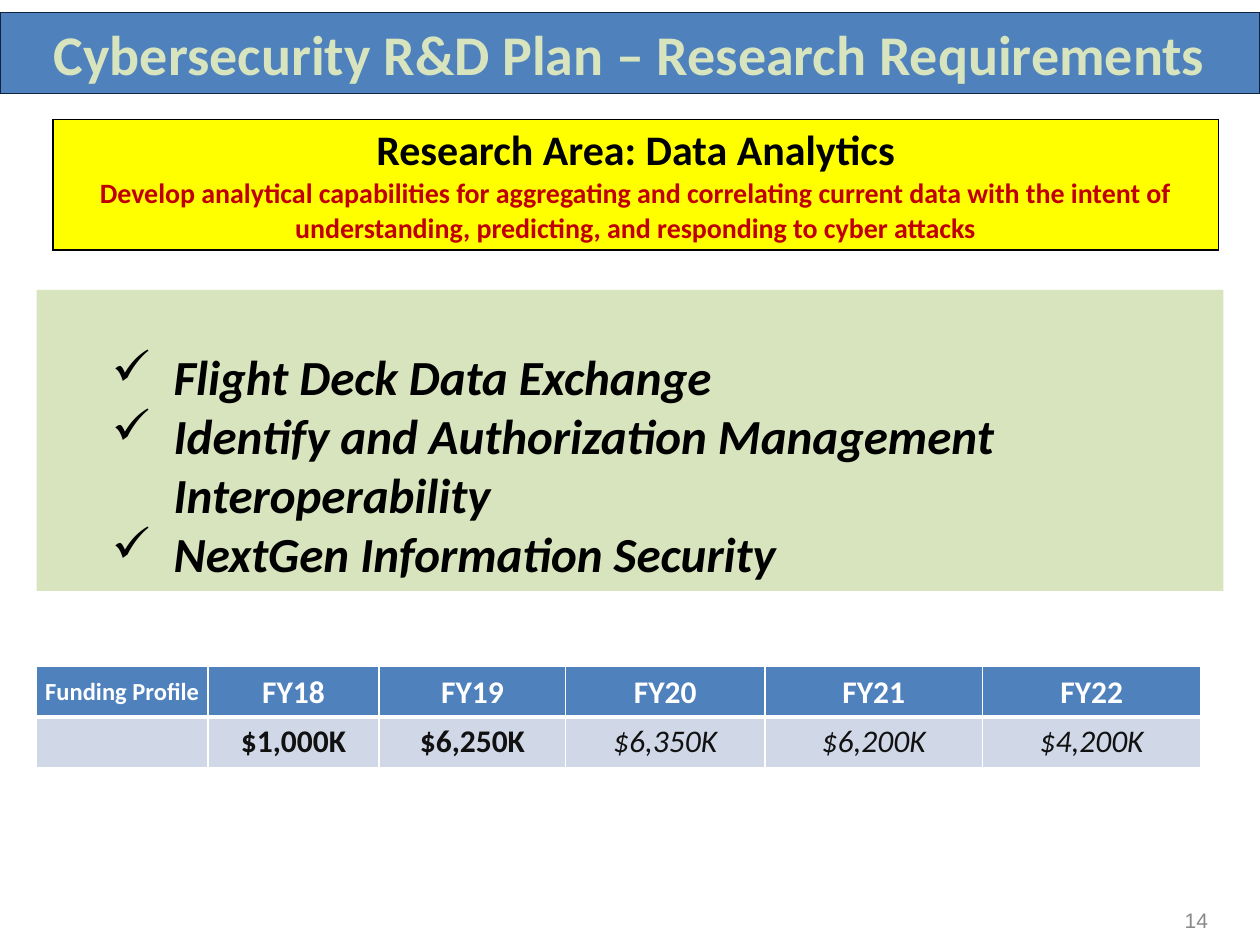
from lxml import etree
from pptx import Presentation
from pptx.dml.color import RGBColor
from pptx.enum import shapes, text
from pptx.oxml import ns
from pptx.util import Inches, Pt

BLUE, GREEN, WHITE, BLACK = "4F81BD", "D7E4BD", "FFFFFF", "000000"
CENTER = text.PP_ALIGN.CENTER


def color(value):
    return RGBColor.from_string(value)


def style(paragraph, size, ink, bold=False, italic=False, align=CENTER, face="Calibri"):
    paragraph.alignment = align
    font = paragraph.font
    font.name, font.size, font.bold, font.italic = face, Pt(size), bold, italic
    font.color.rgb = color(ink)


def add_box(slide, box, fill, line=None):
    shape = slide.shapes.add_shape(shapes.MSO_SHAPE.RECTANGLE, *map(Inches, box))
    shape.shadow.inherit = False
    shape.fill.solid()
    shape.fill.fore_color.rgb = color(fill)
    if line:
        shape.line.color.rgb = color(line)
        shape.line.width = Pt(0.75)
    else:
        shape.line.fill.background()
    frame = shape.text_frame
    frame.word_wrap = True
    return frame


def add_plain_table(slide, box, rows, widths):
    left, top, width, height = map(Inches, box)
    table = slide.shapes.add_table(rows, len(widths), left, top, width, height).table
    table.first_row = table.horz_banding = False
    for column, column_width in zip(table.columns, widths):
        column.width = Inches(column_width)
    return table


def format_cell(cell, fill, line, top=1, bottom=1):
    properties = cell._tc.get_or_add_tcPr()
    for side, width in (("L", 1), ("R", 1), ("T", top), ("B", bottom)):
        border = etree.SubElement(properties, ns.qn(f"a:ln{side}"), w=str(Pt(width)))
        solid = etree.SubElement(border, ns.qn("a:solidFill"))
        etree.SubElement(solid, ns.qn("a:srgbClr"), val=line)
    cell.fill.solid()
    cell.fill.fore_color.rgb = color(fill)


def set_margins(cell, side, top, bottom):
    cell.margin_left = cell.margin_right = Inches(side)
    cell.margin_top, cell.margin_bottom = Inches(top), Inches(bottom)


def add_title(slide, box):
    frame = add_box(slide, box, BLUE, "0F243E")
    frame.vertical_anchor = text.MSO_ANCHOR.MIDDLE
    paragraph = frame.paragraphs[0]
    paragraph.text = "Cybersecurity R&D Plan – Research Requirements"
    style(paragraph, 32, GREEN, bold=True)


def add_research_area(slide, box):
    cell = add_plain_table(slide, box, 1, [box[2]]).cell(0, 0)
    format_cell(cell, "FFFF00", BLACK)
    cell.text = (
        "Research Area: Data Analytics\n"
        "Develop analytical capabilities for aggregating and correlating current data "
        "with the intent of understanding, predicting, and responding to cyber attacks"
    )
    heading, goal = cell.text_frame.paragraphs
    style(heading, 24, BLACK, bold=True)
    style(goal, 16, "C00000", bold=True)


def add_requirements(slide, box, items):
    frame = add_box(slide, box, GREEN)
    frame.vertical_anchor = text.MSO_ANCHOR.TOP
    frame.margin_top = Inches(0.45)
    frame.text = "\n".join(items)
    for paragraph in frame.paragraphs:
        style(paragraph, 28, BLACK, bold=True, italic=True, align=text.PP_ALIGN.LEFT)
        properties = paragraph._p.get_or_add_pPr()
        properties.set("marL", str(Inches(0.99)))
        properties.set("indent", str(Inches(-0.49)))
        bullet = etree.Element(ns.qn("a:buChar"), char="✓")
        properties.insert(0, bullet)


def add_funding(slide, box, widths, years, amounts, firm_years):
    table = add_plain_table(slide, box, 2, widths)
    for index, (year, amount) in enumerate(zip(years, amounts)):
        header, value = table.cell(0, index), table.cell(1, index)
        format_cell(header, BLUE, WHITE, bottom=3)
        set_margins(header, 0.01, 0.01, 0)
        header.vertical_anchor = text.MSO_ANCHOR.MIDDLE
        header.text = year
        style(header.text_frame.paragraphs[0], 18 if index else 14, WHITE, bold=True)

        format_cell(value, "D0D8E8", WHITE, top=3)
        set_margins(value, 0.07, 0, 0)
        value.text = amount
        firm = index <= firm_years
        paragraph = value.text_frame.paragraphs[0]
        style(paragraph, 18, "111111", bold=firm, italic=not firm)
        paragraph.line_spacing = 1.15


def add_page_number(slide, box):
    frame = slide.shapes.add_textbox(*map(Inches, box)).text_frame
    frame.word_wrap = True
    frame.vertical_anchor = text.MSO_ANCHOR.MIDDLE
    frame.text = "14"
    style(frame.paragraphs[0], 12, "898989", face="Arial")


def main():
    presentation = Presentation()
    presentation.slide_width, presentation.slide_height = Inches(10), Inches(7.5)
    slide = presentation.slides.add_slide(presentation.slide_layouts[6])
    add_page_number(slide, (8.91, 7.1, 1.17, 0.4))
    add_title(slide, (0, 0.1, 10, 0.64))
    add_requirements(slide, (0.29, 2.3, 9.42, 2.39), [
        "Flight Deck Data Exchange",
        "Identify and Authorization Management Interoperability",
        "NextGen Information Security",
    ])
    add_research_area(slide, (0.42, 0.95, 9.25, 1.03))
    add_funding(
        slide, (0.29, 5.29, 9.22, 0.8),
        [1.36, 1.36, 1.48, 1.58, 1.73, 1.73],
        ["Funding Profile", "FY18", "FY19", "FY20", "FY21", "FY22"],
        ["", "$1,000K", "$6,250K", "$6,350K", "$6,200K", "$4,200K"],
        firm_years=2,
    )
    presentation.save("out.pptx")


if __name__ == "__main__":
    main()
